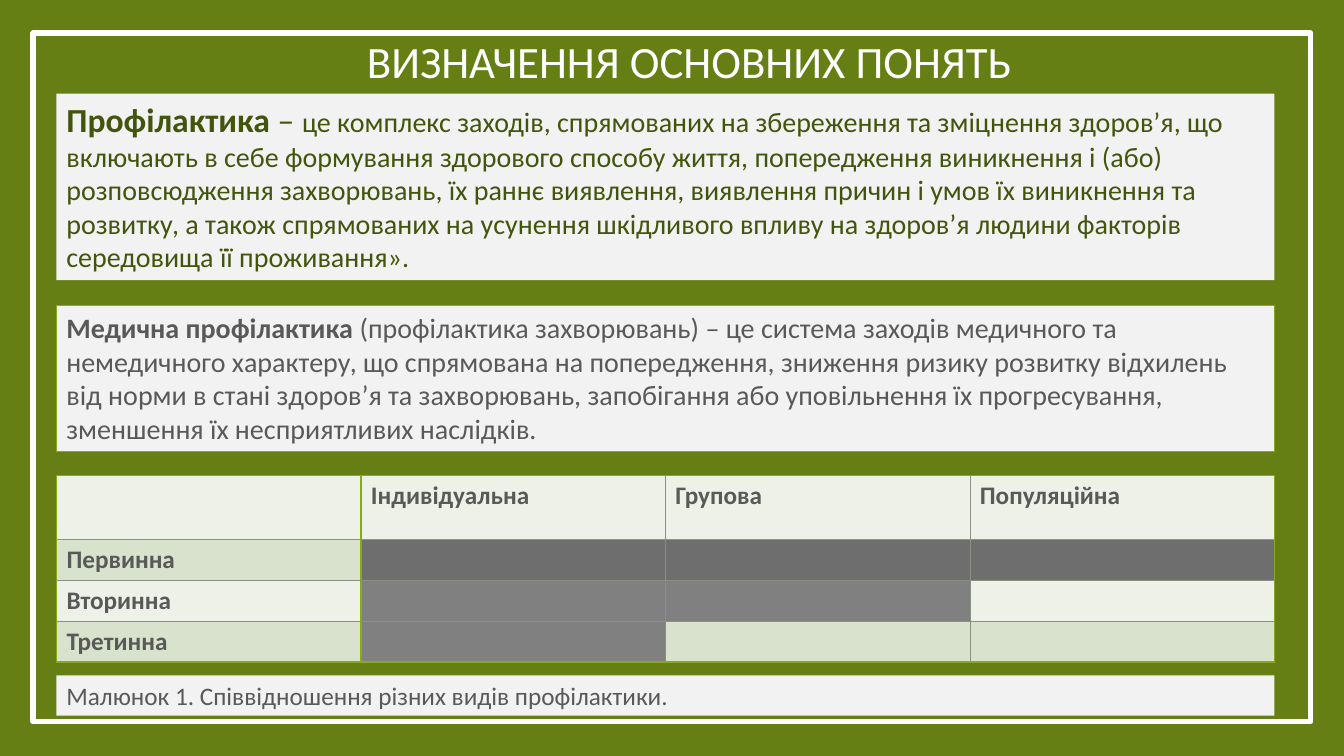
from dataclasses import dataclass

from lxml import etree
from pptx import Presentation, util as u
from pptx.dml.color import RGBColor
from pptx.enum import shapes, text
from pptx.oxml import ns

PX = 9144  # 100 px to the inch


@dataclass(frozen=True)
class Theme:
    font: str = "Calibri"
    back: str = "657F14"
    white: str = "FFFFFF"
    panel: str = "F2F2F2"
    accent: str = "87A91B"
    dark_green: str = "43540D"
    ink: str = "595959"
    rule: str = "8A8F84"
    pale: str = "EDF1E8"
    band: str = "D9E2CD"
    dark_grey: str = "6E6E6E"
    grey: str = "808080"
    title: int = 32
    term: int = 24
    body: int = 20
    label: int = 18


THEME = Theme()
LEFT, WIDTH = 56, 1208
COLUMNS = ["Індивідуальна", "Групова", "Популяційна"]
# Row name, band colour, colour of the marked cells, number of marked cells
LEVELS = [
    ("Первинна", THEME.band, THEME.dark_grey, 3),
    ("Вторинна", THEME.pale, THEME.grey, 2),
    ("Третинна", THEME.band, THEME.grey, 1),
]


def px(*lengths):
    return [u.Emu(length * PX) for length in lengths]


def paint(fill, color):
    fill.solid()
    fill.fore_color.rgb = RGBColor.from_string(color)


def write(para, words, size=THEME.body, color=THEME.ink, bold=False):
    span = para.add_run()
    span.text = words
    span.font.name = THEME.font
    span.font.size = u.Pt(size)
    span.font.bold = bold
    span.font.color.rgb = RGBColor.from_string(color)


def add_box(page, place, fill=None, line=None, weight=1):
    box = page.shapes.add_shape(shapes.MSO_SHAPE.RECTANGLE, *px(*place))
    box.shadow.inherit = False
    if fill:
        paint(box.fill, fill)
    else:
        box.fill.background()
    if line:
        paint(box.line.fill, line)
        box.line.width = u.Pt(weight)
    else:
        box.line.fill.background()
    return box


def add_panel(page, top, height, spans, line=None):
    box = add_box(page, (LEFT, top, WIDTH, height), THEME.panel, line)
    frame = box.text_frame
    frame.word_wrap = True
    frame.vertical_anchor = text.MSO_ANCHOR.TOP
    para = frame.paragraphs[0]
    para.alignment = text.PP_ALIGN.LEFT
    for words, style in spans:
        write(para, words, **style)


def set_title(page, words):
    title = page.shapes.title
    title.left, title.top, title.width, title.height = px(114, 46, 1150, 47)
    frame = title.text_frame
    frame.auto_size = text.MSO_AUTO_SIZE.NONE
    frame.vertical_anchor = text.MSO_ANCHOR.BOTTOM
    para = frame.paragraphs[0]
    para.alignment = text.PP_ALIGN.CENTER
    para.line_spacing = 0.9
    write(para, words, size=THEME.title, color=THEME.white)


def set_borders(cell, row, column):
    # Green round the table and beside its headings, thin grey elsewhere
    strong = {"L": column < 2, "R": column in (0, 3),
              "T": row < 2, "B": row in (0, 3)}
    properties = cell._tc.get_or_add_tcPr()
    for index, (side, is_strong) in enumerate(strong.items()):
        line = etree.Element(ns.qn(f"a:ln{side}"))
        line.set("w", str(u.Pt(1 if is_strong else 0.5)))
        fill = etree.SubElement(line, ns.qn("a:solidFill"))
        color = etree.SubElement(fill, ns.qn("a:srgbClr"))
        color.set("val", THEME.accent if is_strong else THEME.rule)
        properties.insert(index, line)


def fill_cell(table, row, column, words, color):
    cell = table.cell(row, column)
    paint(cell.fill, color)
    set_borders(cell, row, column)
    para = cell.text_frame.paragraphs[0]
    if words:
        write(para, words, size=THEME.label, bold=True)
    else:
        para.font.size = u.Pt(THEME.label)


def add_levels_table(page):
    table = page.shapes.add_table(4, 4, *px(LEFT, 472, WIDTH, 183)).table
    for column in table.columns:
        column.width = u.Emu(WIDTH // 4 * PX)
    for row, height in zip(table.rows, px(63, 40, 40, 40)):
        row.height = height
    for column, words in enumerate(["", *COLUMNS]):
        fill_cell(table, 0, column, words, THEME.pale)
    for row, (name, band, mark, count) in enumerate(LEVELS, 1):
        fill_cell(table, row, 0, name, band)
        for column in range(1, 4):
            fill_cell(table, row, column, "", mark if column <= count else band)


def main():
    deck = Presentation()
    deck.slide_width, deck.slide_height = px(1333, 750)
    page = deck.slides.add_slide(deck.slide_layouts[5])
    paint(page.background.fill, THEME.back)

    # Frame and title
    add_box(page, (33, 33, 1267, 683), line=THEME.white, weight=4)
    set_title(page, "ВИЗНАЧЕННЯ ОСНОВНИХ ПОНЯТЬ ")

    # Definitions
    green = {"color": THEME.dark_green}
    add_panel(page, 93, 185, [
        ("Профілактика", {"size": THEME.term, "bold": True, **green}),
        (" – ", {"size": THEME.term, **green}),
        ("це комплекс заходів, спрямованих на збереження та зміцнення "
         "здоров’я, що включають в себе формування здорового способу життя, "
         "попередження виникнення і (або) розповсюдження захворювань, їх "
         "раннє виявлення, виявлення причин і умов їх виникнення та розвитку, "
         "а також спрямованих на усунення шкідливого впливу на здоров’я "
         "людини факторів середовища її проживання».", green),
    ])
    add_panel(page, 303, 145, [
        ("Медична профілактика ", {"bold": True}),
        ("(профілактика захворювань) – це система заходів медичного та "
         "немедичного характеру, що спрямована на попередження, зниження "
         "ризику розвитку відхилень від норми в стані здоров’я та "
         "захворювань, запобігання або уповільнення їх прогресування, "
         "зменшення їх несприятливих наслідків.", {}),
    ], line=THEME.accent)

    # Table and its caption
    add_levels_table(page)
    add_panel(page, 670, 40, [
        ("Малюнок 1. Співвідношення різних видів профілактики.",
         {"size": THEME.label}),
    ])

    deck.save("out.pptx")


if __name__ == "__main__":
    main()
